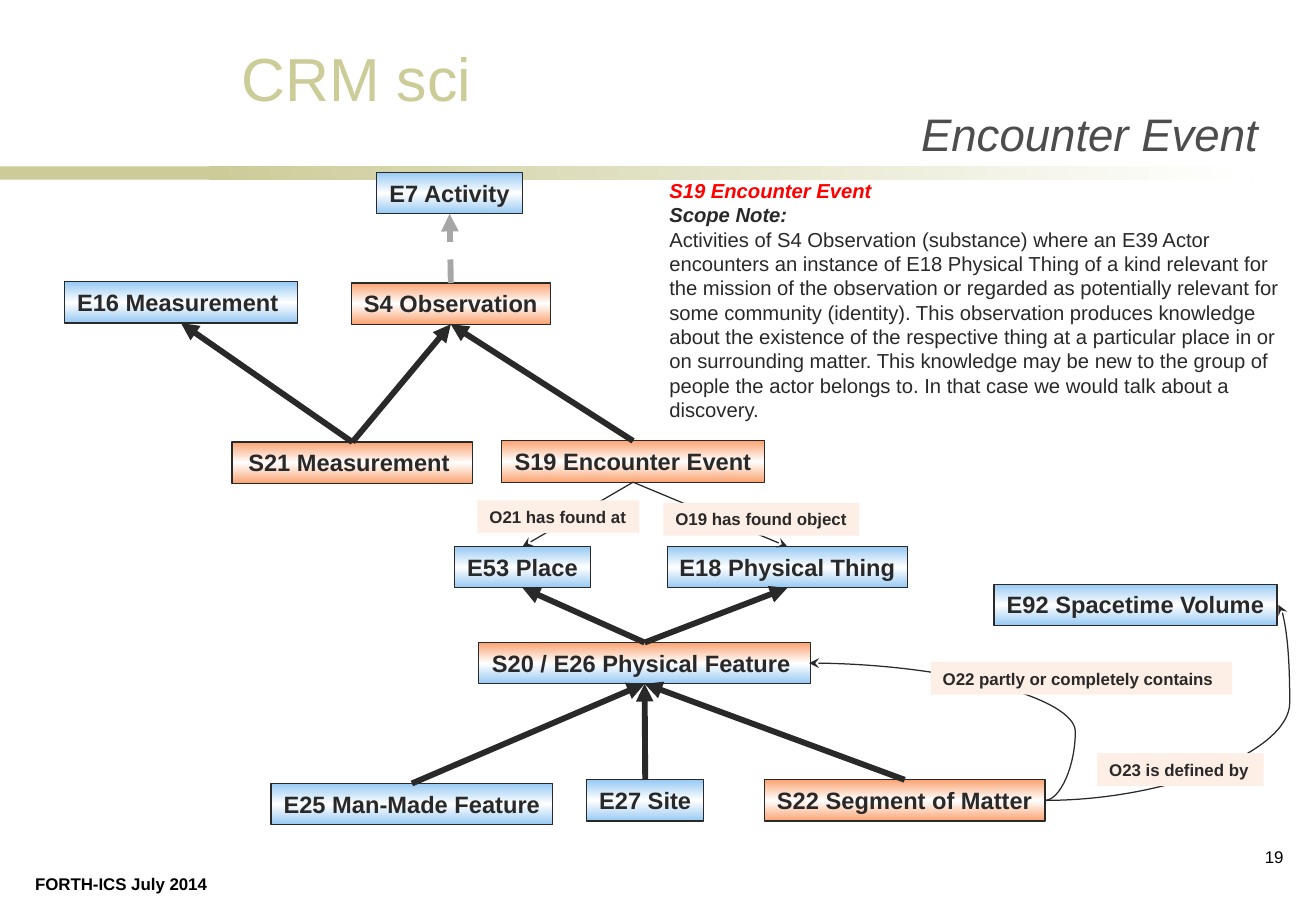
from copy import deepcopy
from lxml import etree
from pptx import Presentation
from pptx import util as u
from pptx.dml.color import RGBColor
from pptx.enum import dml, shapes, text
from pptx.oxml.ns import qn

HUES = {"sand": "CCCC99", "white": "FFFFFF", "ink": "292929", "blue": "97C9F3",
        "peach": "FAA372", "pale": "FEEFE6", "grey": "A6A6A6", "slate": "4D4D4D",
        "red": "FF0000", "black": "000000"}

BOXES = {
    "S4": ("S4 Observation", 2.89, 2.33, 1.64, "peach", "peach"),
    "E7": ("E7 Activity", 3.1, 1.42, 1.2, "blue", "blue"),
    "E16": ("E16 Measurement ", 0.53, 2.32, 1.92, "blue", "blue"),
    "S19": ("S19 Encounter Event", 4.13, 3.63, 2.16, "peach", "peach"),
    "S21": ("S21 Measurement ", 1.91, 3.64, 1.98, "peach", "peach"),
    "E53": ("E53 Place", 3.74, 4.5, 1.12, "blue", "blue"),
    "E18": ("E18 Physical Thing", 5.49, 4.5, 1.98, "blue", "blue"),
    "S20": ("S20 / E26 Physical Feature ", 3.94, 5.29, 2.73, "peach", "blue"),
    "E27": ("E27 Site", 4.83, 6.42, 0.96, "blue", "blue"),
    "E25": ("E25 Man-Made Feature", 2.23, 6.45, 2.32, "blue", "blue"),
    "S22": ("S22 Segment of Matter", 6.29, 6.42, 2.31, "peach", "peach"),
    "E92": ("E92 Spacetime Volume", 8.18, 4.81, 2.33, "blue", "blue"),
}
BOX_H = 0.34
TOP, FOOT = 0, 2

KINDS = [("S21", "S4"), ("S21", "E16"), ("S19", "S4"), ("S20", "E53"), ("S20", "E18"),
         ("E25", "S20"), ("E27", "S20"), ("S22", "S20")]
FINDS = [("S19", "E18"), ("S19", "E53")]
CURVES = [((8.6, 6.59), (6.66, 5.46), -12900), ((8.6, 6.59), (10.52, 4.98), 104900)]

LABELS = [
    ("O21 has found at", 3.93, 4.12, 1.33),
    ("O19 has found object", 5.46, 4.14, 1.61),
    ("O22 partly or completely contains", 7.66, 5.45, 2.48),
    ("O23 is defined by", 9.03, 6.2, 1.37),
]
LABEL_H = 0.27

NOTE = [
    ("S19 Encounter Event", "red", {"bold": True, "italic": True}, "JUSTIFY"),
    ("Scope Note:", "ink", {"bold": True, "italic": True}, "JUSTIFY"),
    ("Activities of S4 Observation (substance) where an E39 Actor encounters an instance of "
     "E18 Physical Thing of a kind relevant for the mission of the observation or regarded as "
     "potentially relevant for some community (identity). This observation produces knowledge "
     "about the existence of the respective thing at a particular place in or on surrounding "
     "matter. This knowledge may be new to the group of people the actor belongs to. In that "
     "case we would talk about a discovery.", "ink", {}, "LEFT"),
]

TEXTS = [
    ((0.19, 7.14, 1.63, 0.27), 10, False, "TOP",
     [("FORTH-ICS July 2014", "black", {"bold": True}, "LEFT")]),
    ((1.89, 0.29, 2.11, 0.71), 36, False, "TOP", [("CRM sci", "sand", {}, "LEFT")]),
    ((3.74, 0.74, 6.71, 0.63), 27, True, "BOTTOM",
     [("Encounter Event", "slate", {"italic": True}, "RIGHT")]),
    ((10.17, 6.92, 0.49, 0.42), 10, True, "TOP", [("19", "black", {}, "RIGHT")]),
    ((5.41, 1.42, 5.33, 2.12), 12, True, "TOP", NOTE),
]


def tint(name):
    return RGBColor.from_string(HUES[name])


def put(items, **traits):
    for item in items:
        for key, val in traits.items():
            setattr(item, key, val)


def write(shape, size, wrap, anchor, lines):
    frame = shape.text_frame
    put([frame], word_wrap=wrap, vertical_anchor=getattr(text.MSO_ANCHOR, anchor))
    for i, (words, hue, traits, align) in enumerate(lines):
        para = frame.add_paragraph() if i else frame.paragraphs[0]
        para.alignment = getattr(text.PP_ALIGN, align)
        run = para.add_run()
        run.text = words
        put([run.font], **{"name": "Arial", "size": u.Pt(size), **traits})
        run.font.color.rgb = tint(hue)


def block(slide, place, hues, angle=0):
    shape = slide.shapes.add_shape(shapes.MSO_SHAPE.RECTANGLE, *map(u.Inches, place))
    shape.shadow.inherit = False
    shape.line.fill.background()
    if len(hues) == 1:
        shape.fill.solid()
        shape.fill.fore_color.rgb = tint(hues[0])
        return shape
    shape.fill.gradient()
    shape.fill.gradient_angle = angle
    stops = shape._element.spPr.find(qn("a:gradFill")).find(qn("a:gsLst"))
    for _ in hues[2:]:
        stops.insert(1, deepcopy(stops[0]))
    for i, (stop, hue) in enumerate(zip(shape.fill.gradient_stops, hues)):
        stop.position = i / (len(hues) - 1)
        stop.color.rgb = tint(hue)
    return shape


def link(slide, form, start, end, width, head, hue="ink"):
    line = slide.shapes.add_connector(form, *map(u.Inches, start + end))
    line.line.width = u.Pt(width)
    line.line.color.rgb = tint(hue)
    etree.SubElement(line._element.spPr, qn("a:effectLst"))
    etree.SubElement(line.line._get_or_add_ln(), qn("a:tailEnd"), type=head)
    return line


def join(slide, nodes, child, base, width, head, hue="ink", site=TOP):
    line = link(slide, shapes.MSO_CONNECTOR.STRAIGHT, (0, 0), (1, 1), width, head, hue)
    line.begin_connect(nodes[child], site)
    line.end_connect(nodes[base], FOOT if site == TOP else TOP)
    return line


def main():
    deck = Presentation()
    put([deck], slide_width=u.Inches(10.83), slide_height=u.Inches(7.5))
    slide = deck.slides.add_slide(deck.slide_layouts[6])

    block(slide, (0, 1.37, 2.53, 0.11), ["sand"])
    block(slide, (1.72, 1.37, 8.58, 0.11), ["sand", "white"])
    for place, *style in TEXTS:
        write(slide.shapes.add_textbox(*map(u.Inches, place)), *style)

    nodes = {}
    for key, (words, left, top, width, first, last) in BOXES.items():
        node = block(slide, (left, top, width, BOX_H), [first, "white", last], 270)
        node.line.color.rgb = tint("ink")
        node.line.width = u.Pt(0.75)
        write(node, 14, False, "TOP", [(words, "ink", {"bold": True}, "CENTER")])
        nodes[key] = node

    for child, base in KINDS:
        join(slide, nodes, child, base, 3.5, "triangle")
    dash = join(slide, nodes, "S4", "E7", 3.5, "triangle", "grey")
    dash.line.dash_style = dml.MSO_LINE.DASH
    for event, thing in FINDS:
        join(slide, nodes, event, thing, 0.75, "stealth", site=FOOT)
    for start, end, bend in CURVES:
        curve = link(slide, shapes.MSO_CONNECTOR.CURVE, start, end, 0.75, "stealth")
        guides = curve._element.spPr.find(qn("a:prstGeom")).find(qn("a:avLst"))
        etree.SubElement(guides, qn("a:gd"), name="adj1", fmla=f"val {bend}")

    for words, left, top, width in LABELS:
        tag = block(slide, (left, top, width, LABEL_H), ["pale"])
        write(tag, 10, True, "MIDDLE", [(words, "ink", {"bold": True}, "LEFT")])

    deck.save("out.pptx")


if __name__ == "__main__":
    main()
